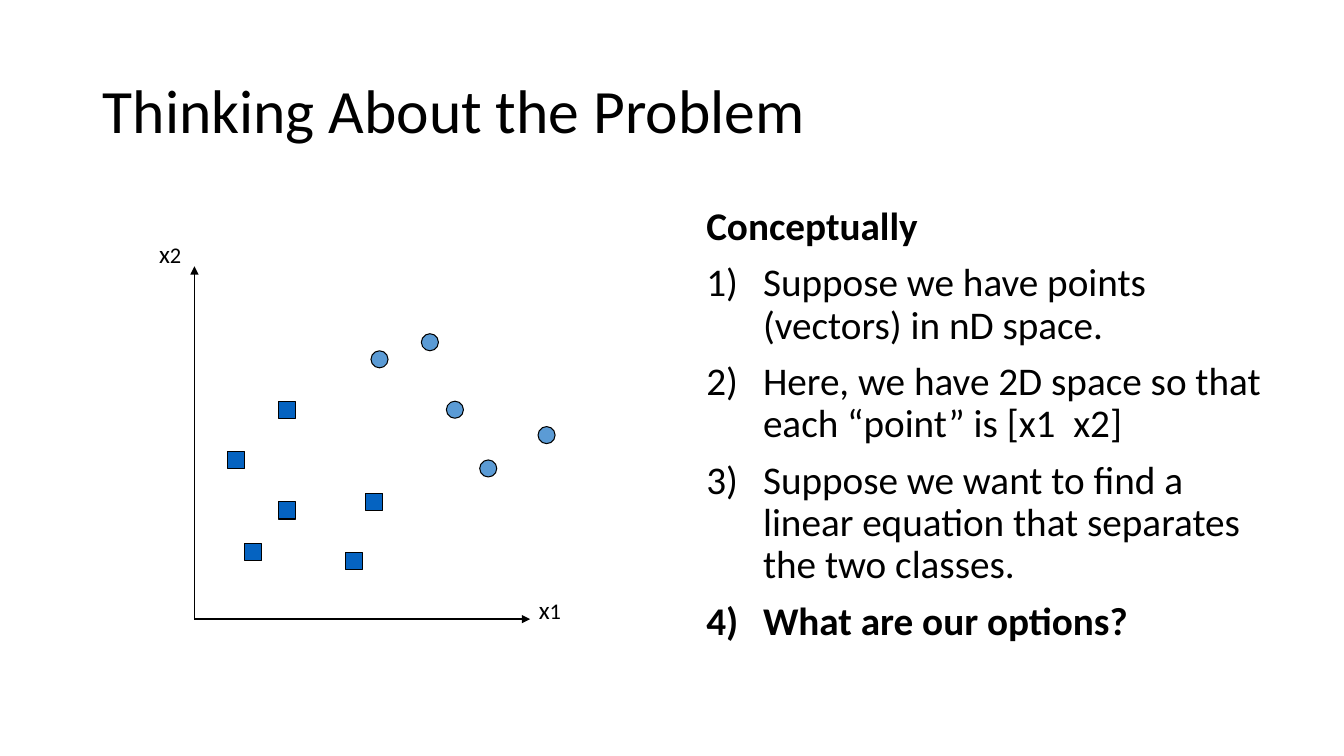
from lxml import etree
from pptx import Presentation
from pptx.dml.color import RGBColor
from pptx.enum.shapes import MSO_CONNECTOR, MSO_SHAPE
from pptx.enum.text import MSO_ANCHOR
from pptx.oxml.ns import qn
from pptx.util import Cm, Pt

STRAIGHT = MSO_CONNECTOR.STRAIGHT
CIRCLE = MSO_SHAPE.OVAL
SQUARE = MSO_SHAPE.RECTANGLE
TOP = MSO_ANCHOR.TOP
MIDDLE = MSO_ANCHOR.MIDDLE

COLORS = {"ink": "000000", "circle": "5B9BD5", "square": "0563C1"}
FONT = "Calibri"
BODY_FORMAT = {"line_spacing": 0.9, "space_before": Pt(10)}
MARKER_SIZE = 0.43
LABEL_SIZE = (1.07, 1.02)

TITLE_BOX = (2.34, 1.02, 29.21, 3.68)
STEPS_BOX = (17.55, 5.08, 14.83, 12.09)
PLOT_BOX = (4.9, 6.71, 8.46, 8.89)

HEADING = "Conceptually"
STEPS = [
    ("Suppose we have points (vectors) in nD space.", False),
    ("Here, we have 2D space so that each “point” is [x1  x2]", False),
    ("Suppose we want to find a linear equation that separates the two classes.", False),
    ("What are our options?", True),
]
CLASSES = [
    (CIRCLE, "circle", [(5.72, 1.7), (6.35, 3.4), (8.66, 4.04), (4.45, 2.13), (7.19, 4.88)]),
    (SQUARE, "square", [(0.84, 4.67), (4.32, 5.72), (3.81, 7.21), (2.11, 5.94),
                        (1.27, 6.99), (2.11, 3.4)]),
]
AXIS_LABELS = [("1", 8.43, 8.15), ("2", -1.14, -0.84)]


def rgb(name):
    return RGBColor.from_string(COLORS[name])


def apply_format(target, values):
    for name, value in values.items():
        setattr(target, name, value)


def add_text_box(page, box, wrap=True, anchor=TOP):
    frame = page.shapes.add_textbox(*map(Cm, box)).text_frame
    apply_format(frame, {"word_wrap": wrap, "vertical_anchor": anchor})
    return frame


def add_span(para, text, size, bold=False):
    span = para.add_run()
    span.text = text
    apply_format(span.font, {"name": FONT, "size": Pt(size), "bold": bold})
    span.font.color.rgb = rgb("ink")


def number_paragraph(para):
    properties = para._p.get_or_add_pPr()
    indent = Cm(1.43)
    properties.set("marL", str(indent))
    properties.set("indent", str(-indent))
    bullet_font = etree.SubElement(properties, qn("a:buFont"))
    bullet_font.set("typeface", "+mj-lt")
    etree.SubElement(properties, qn("a:buAutoNum")).set("type", "arabicParenR")


def add_title(page, box):
    para = add_text_box(page, box, anchor=MIDDLE).paragraphs[0]
    para.line_spacing = 0.9
    add_span(para, "Thinking About the Problem", 44)


def add_steps(page, box):
    frame = add_text_box(page, box)
    heading = frame.paragraphs[0]
    apply_format(heading, BODY_FORMAT)
    add_span(heading, HEADING, 28, True)
    for text, bold in STEPS:
        para = frame.add_paragraph()
        apply_format(para, BODY_FORMAT)
        number_paragraph(para)
        add_span(para, text, 28, bold)


def add_axis(page, start, end):
    axis = page.shapes.add_connector(STRAIGHT, *map(Cm, start + end))
    axis.line.width = Pt(1)
    axis.line.color.rgb = rgb("ink")
    etree.SubElement(axis.line._get_or_add_ln(), qn("a:tailEnd")).set("type", "triangle")
    etree.SubElement(axis._element.spPr, qn("a:effectLst"))


def add_marker(page, kind, color, left, top):
    marker = page.shapes.add_shape(kind, *map(Cm, (left, top, MARKER_SIZE, MARKER_SIZE)))
    marker.shadow.inherit = False
    marker.fill.solid()
    marker.fill.fore_color.rgb = rgb(color)
    marker.line.color.rgb = rgb("ink")
    marker.line.width = Pt(0.75)


def add_plot(page, box):
    left, top, width, height = box
    origin = (left, top + height)
    add_axis(page, origin, (left, top))
    add_axis(page, origin, (left + width, top + height))
    for kind, color, points in CLASSES:
        for x, y in points:
            add_marker(page, kind, color, left + x, top + y)
    for index, x, y in AXIS_LABELS:
        label = add_text_box(page, (left + x, top + y) + LABEL_SIZE, wrap=False)
        add_span(label.paragraphs[0], "x", 18)
        add_span(label.paragraphs[0], index, 16)


def main():
    deck = Presentation()
    apply_format(deck, {"slide_width": Cm(33.87), "slide_height": Cm(19.05)})
    page = deck.slides.add_slide(deck.slide_layouts[6])
    add_title(page, TITLE_BOX)
    add_steps(page, STEPS_BOX)
    add_plot(page, PLOT_BOX)
    deck.save("out.pptx")


if __name__ == "__main__":
    main()
